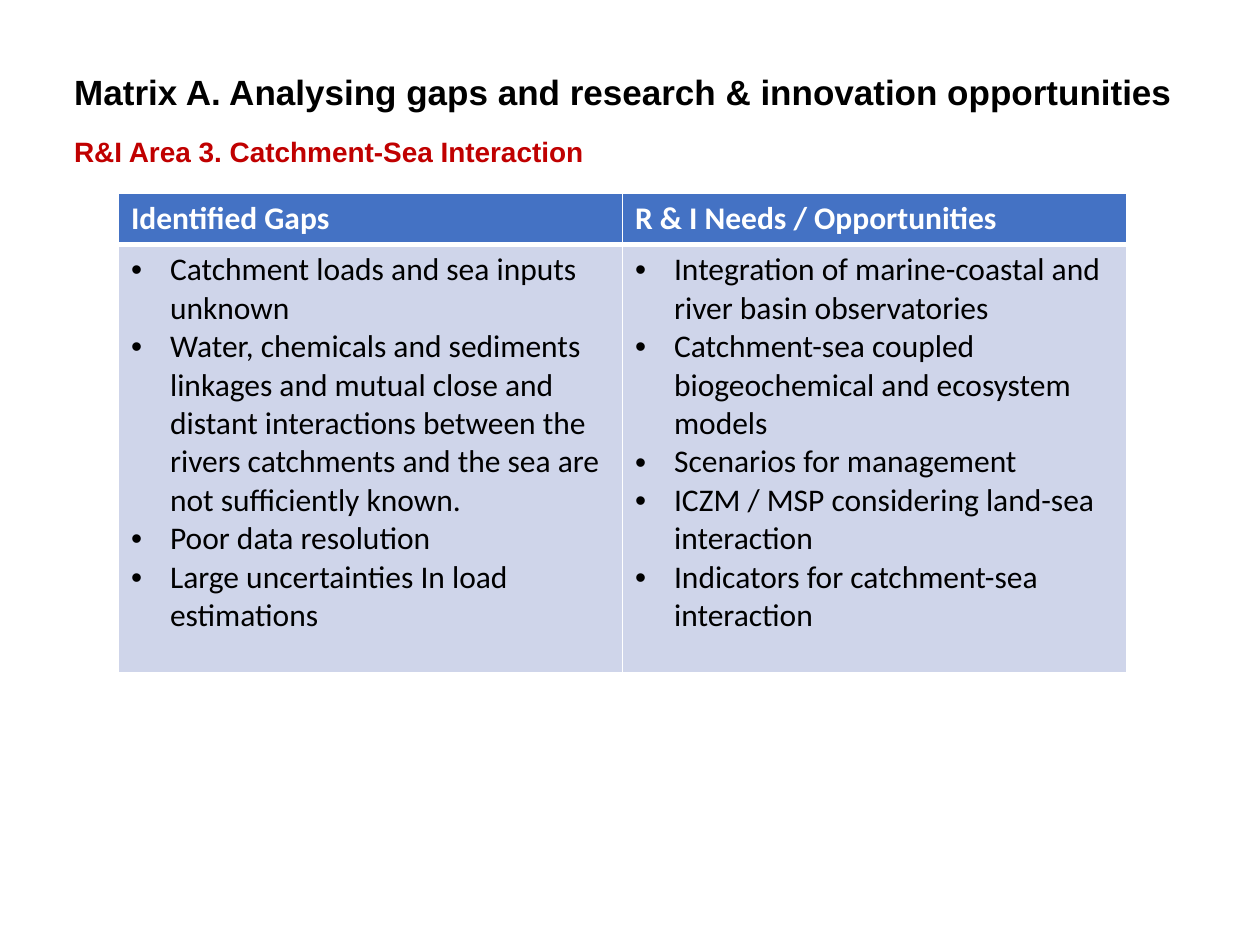
from dataclasses import dataclass

import pptx
import pptx.dml.color
import pptx.enum.text
import pptx.oxml.ns
import pptx.util
from lxml import etree

Inches, Pt = pptx.util.Inches, pptx.util.Pt
Anchor = pptx.enum.text.MSO_ANCHOR
qn = pptx.oxml.ns.qn

SLIDE_W, SLIDE_H = 10, 7.5
COLOURS = {
    "black": "000000",
    "white": "FFFFFF",
    "red": "C00000",
    "header": "4472C4",
    "body": "CFD5EA",
}
BULLET_INDENT = 0.31
HEADER_H, BODY_H = 0.41, 3.4


@dataclass
class Heading:
    text: str
    top: float
    width: float
    height: float
    size: int
    colour: str
    anchor: Anchor


@dataclass
class Column:
    title: str
    items: list[str]


HEADINGS = [
    Heading("Matrix A. Analysing gaps and research & innovation opportunities",
            0.43, 8.98, 0.59, 20, "black", Anchor.MIDDLE),
    Heading("R&I Area 3. Catchment-Sea Interaction",
            1.02, 4.87, 0.37, 16, "red", Anchor.TOP),
]
COLUMNS = [
    Column("Identified Gaps", [
        "Catchment loads and sea inputs unknown",
        "Water, chemicals and sediments linkages and mutual close and distant "
        "interactions between the rivers catchments and the sea are not "
        "sufficiently known.",
        "Poor data resolution",
        "Large uncertainties In load estimations",
    ]),
    Column("R & I Needs / Opportunities", [
        "Integration of marine-coastal and river basin observatories",
        "Catchment-sea coupled biogeochemical and ecosystem models",
        "Scenarios for management",
        "ICZM / MSP considering land-sea interaction",
        "Indicators for catchment-sea interaction",
    ]),
]


def rgb(name: str) -> pptx.dml.color.RGBColor:
    return pptx.dml.color.RGBColor.from_string(COLOURS[name])


def format_runs(tf, font: str, size: int, colour: str, bold: bool) -> None:
    for p in tf.paragraphs:
        for r in p.runs:
            r.font.name, r.font.size, r.font.bold = font, Pt(size), bold
            r.font.color.rgb = rgb(colour)


def add_heading(slide, h: Heading) -> None:
    sp = slide.shapes.add_textbox(
        Inches(0.49), Inches(h.top), Inches(h.width), Inches(h.height))
    tf = sp.text_frame
    tf.word_wrap = True
    tf.vertical_anchor = h.anchor
    tf.text = h.text
    format_runs(tf, "Arial", h.size, h.colour, True)


def add_bullet(p) -> None:
    """Give a paragraph a hanging bullet."""
    pPr = p._p.get_or_add_pPr()
    indent = Inches(BULLET_INDENT)
    pPr.set("marL", str(indent))
    pPr.set("indent", str(-indent))
    etree.SubElement(pPr, qn("a:buFont"), typeface="Arial")
    etree.SubElement(pPr, qn("a:buChar"), char="•")


def set_borders(cell, top: float, bottom: float) -> None:
    """Draw white borders, 1 pt at the sides and as given above and below."""
    tcPr = cell._tc.get_or_add_tcPr()
    widths = {"lnL": 1, "lnR": 1, "lnT": top, "lnB": bottom}
    for i, (tag, width) in enumerate(widths.items()):
        ln = etree.Element(qn(f"a:{tag}"), w=str(Pt(width)))
        fill = etree.SubElement(ln, qn("a:solidFill"))
        etree.SubElement(fill, qn("a:srgbClr"), val=COLOURS["white"])
        tcPr.insert(i, ln)


def fill_cell(cell, lines: list[str], header: bool) -> None:
    cell.fill.solid()
    cell.fill.fore_color.rgb = rgb("header" if header else "body")
    set_borders(cell, 1 if header else 3, 3 if header else 1)
    tf = cell.text_frame
    tf.text = "\n".join(lines)
    format_runs(tf, "Calibri", 18, "white" if header else "black", header)
    if not header:
        for p in tf.paragraphs:
            add_bullet(p)


def add_matrix(slide, columns: list[Column]) -> None:
    table = slide.shapes.add_table(
        2, len(columns), Inches(0.94), Inches(1.53),
        Inches(0.8 * SLIDE_W), Inches(HEADER_H + BODY_H)).table
    table.rows[0].height, table.rows[1].height = Inches(HEADER_H), Inches(BODY_H)
    for i, column in enumerate(columns):
        fill_cell(table.cell(0, i), [column.title], True)
        fill_cell(table.cell(1, i), column.items, False)


def main() -> None:
    prs = pptx.Presentation()
    prs.slide_width, prs.slide_height = Inches(SLIDE_W), Inches(SLIDE_H)
    slide = prs.slides.add_slide(prs.slide_layouts[6])
    for heading in HEADINGS:
        add_heading(slide, heading)
    add_matrix(slide, COLUMNS)
    prs.save("out.pptx")


if __name__ == "__main__":
    main()
